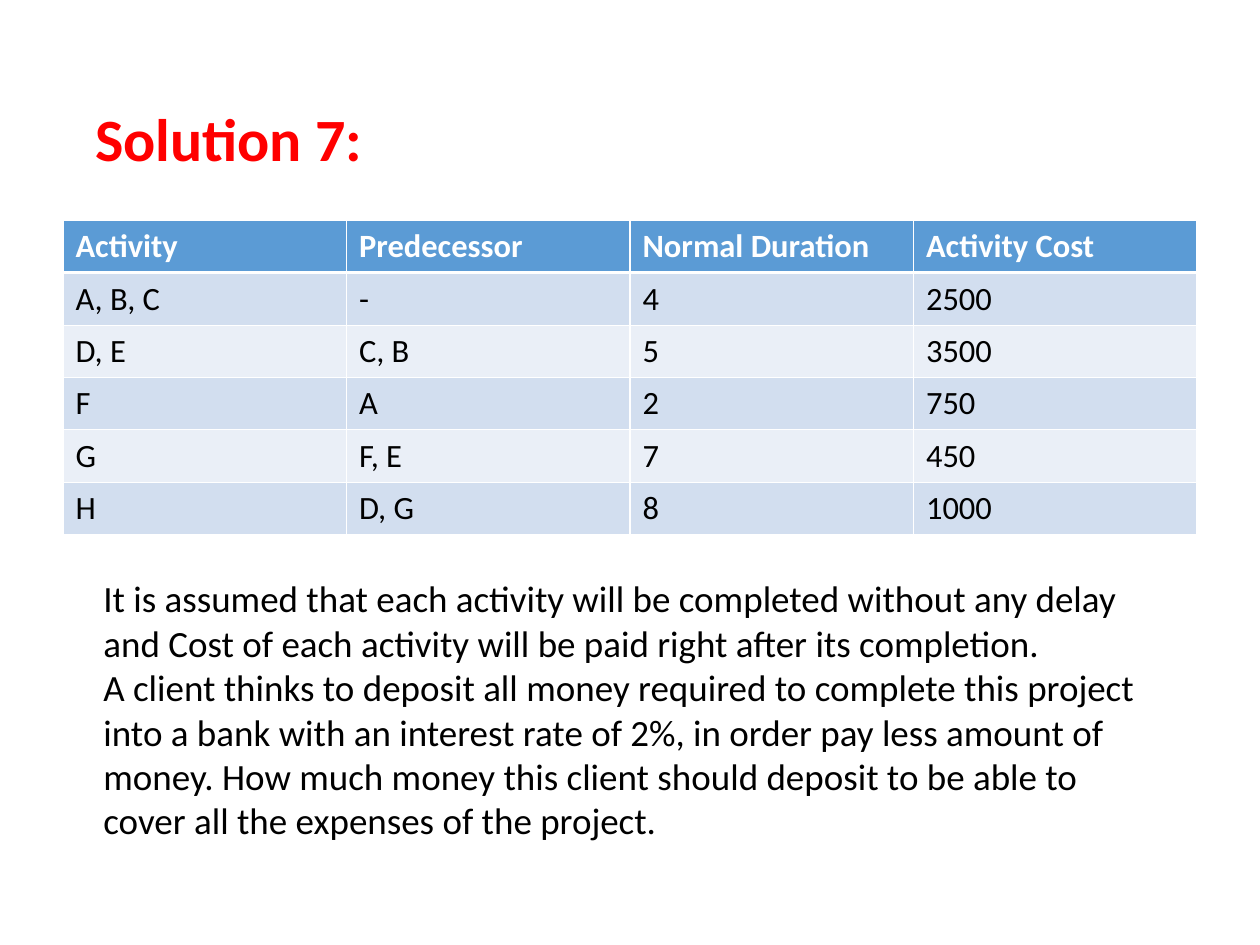
from dataclasses import dataclass

from pptx import Presentation
from pptx.dml.color import RGBColor
from pptx.enum.text import MSO_ANCHOR
from pptx.oxml.ns import qn
from pptx.util import Inches, Pt
from lxml import etree

MIDDLE = MSO_ANCHOR.MIDDLE
TOP = MSO_ANCHOR.TOP


@dataclass(frozen=True)
class Theme:
    font: str = "Calibri"
    title_size: float = 48
    table_size: float = 26
    body_size: float = 29.6
    title: str = "FF0000"
    text: str = "000000"
    header_text: str = "FFFFFF"
    header: str = "5B9BD5"
    bands: tuple = ("D2DEEF", "EAEFF7")
    border: str = "FFFFFF"
    thin: float = 1
    thick: float = 3


class SlideBuilder:
    def __init__(self, slide, theme):
        self.slide = slide
        self.theme = theme

    def add_run(self, p, text, size, color, bold=False):
        r = p.add_run()
        r.text = text
        for name, value in {"name": self.theme.font, "size": Pt(size), "bold": bold}.items():
            setattr(r.font, name, value)
        r.font.color.rgb = RGBColor.from_string(color)

    def text(self, box, paragraphs, size, color, bold=False, anchor=TOP, spacing=None):
        sp = self.slide.shapes.add_textbox(*map(Inches, box))
        tf = sp.text_frame
        tf.word_wrap = True
        tf.vertical_anchor = anchor
        for i, line in enumerate(paragraphs):
            p = tf.add_paragraph() if i else tf.paragraphs[0]
            p.line_spacing = spacing
            self.add_run(p, line, size, color, bold)

    def borders(self, cell, widths):
        tc_pr = cell._tc.get_or_add_tcPr()
        for side, width in widths.items():
            ln = etree.SubElement(tc_pr, qn(f"a:ln{side}"), w=str(Pt(width)))
            fill = etree.SubElement(ln, qn("a:solidFill"))
            etree.SubElement(fill, qn("a:srgbClr"), val=self.theme.border)

    def table(self, box, rows):
        t = self.theme
        margins = {"margin_left": 0.14, "margin_right": 0.14,
                   "margin_top": 0.07, "margin_bottom": 0.07}
        table = self.slide.shapes.add_table(len(rows), len(rows[0]), *map(Inches, box)).table
        for i, row in enumerate(rows):
            header = i == 0
            color = t.header_text if header else t.text
            fill = t.header if header else t.bands[(i - 1) % 2]
            # The header is set off by a thicker rule
            widths = {"L": t.thin, "R": t.thin,
                      "T": t.thick if i == 1 else t.thin,
                      "B": t.thick if header else t.thin}
            for j, value in enumerate(row):
                cell = table.cell(i, j)
                for name, inches in margins.items():
                    setattr(cell, name, Inches(inches))
                self.borders(cell, widths)
                cell.fill.solid()
                cell.fill.fore_color.rgb = RGBColor.from_string(fill)
                self.add_run(cell.text_frame.paragraphs[0], value, t.table_size, color, header)


ACTIVITIES = [
    ("Activity", "Predecessor", "Normal Duration", "Activity Cost"),
    ("A, B, C", "-", "4", "2500"),
    ("D, E", "C, B", "5", "3500"),
    ("F", "A", "2", "750"),
    ("G", "F, E", "7", "450"),
    ("H", "D, G", "8", "1000"),
]

QUESTION = [
    "It is assumed that each activity will be completed without any delay and Cost of "
    "each activity will be paid right after its completion.",
    "A client thinks to deposit all money required to complete this project into a bank "
    "with an interest rate of 2%, in order pay less amount of money. How much money this "
    "client should deposit to be able to cover all the expenses of the project.",
]


def main():
    prs = Presentation()
    prs.slide_width, prs.slide_height = Inches(14), Inches(10.5)
    theme = Theme()
    s = SlideBuilder(prs.slides.add_slide(prs.slide_layouts[6]), theme)

    # Title
    s.text((0.96, 0.56, 12.07, 2.03), ["Solution 7:"], theme.title_size, theme.title,
           bold=True, anchor=MIDDLE, spacing=0.9)

    # Activity table
    s.table((0.7, 2.45, 12.6, 3.49), ACTIVITIES)

    # Assumptions and question
    s.text((1.05, 6.35, 12.02, 3.09), QUESTION, theme.body_size, theme.text)

    prs.save("out.pptx")


if __name__ == "__main__":
    main()
